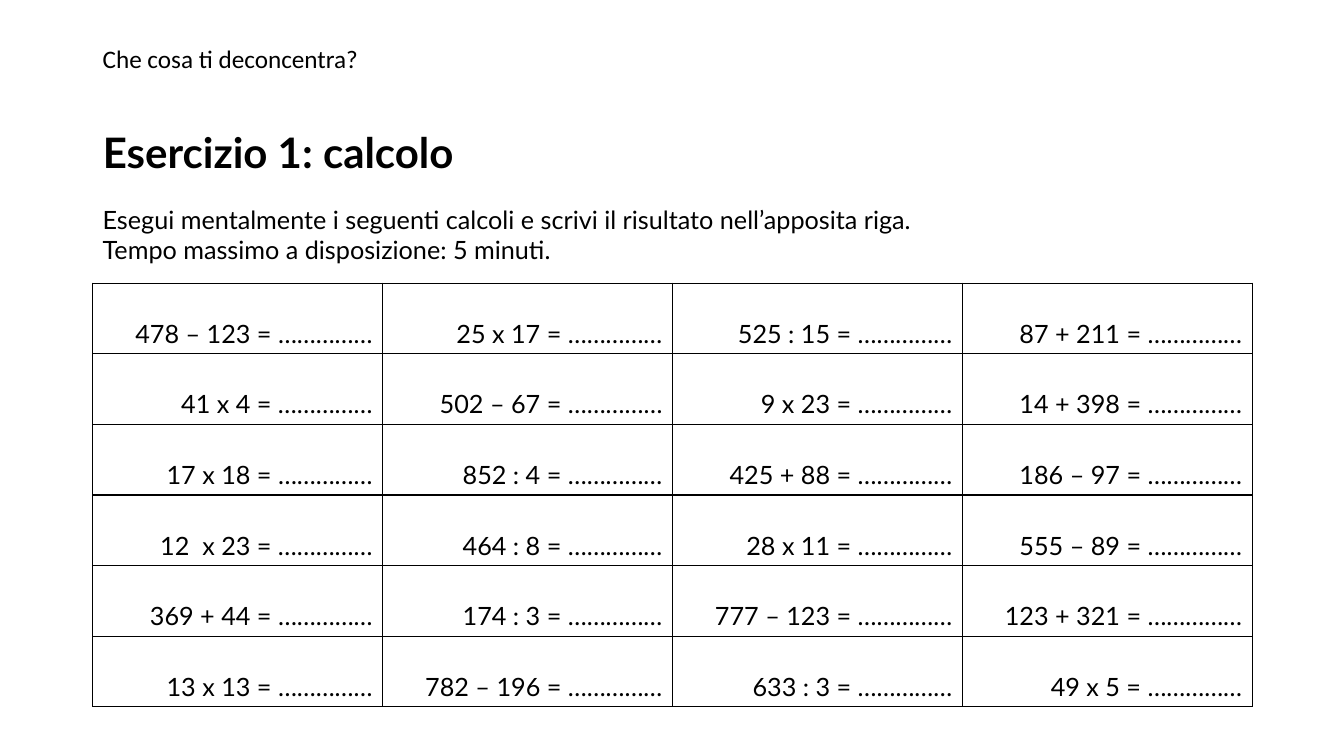
from dataclasses import dataclass

from lxml.etree import SubElement
from pptx import Presentation
from pptx.dml.color import RGBColor
from pptx.enum.text import MSO_ANCHOR, PP_ALIGN
from pptx.oxml.ns import qn
from pptx.util import Inches, Pt


@dataclass(frozen=True)
class Theme:
    ink: str = "000000"
    paper: str = "FFFFFF"
    head_font: str = "Calibri"
    font: str = "Lato"
    title_size: int = 30
    body_size: int = 18
    border: float = 1


THEME = Theme()
LEFT, WIDTH = 0.92, 11.5
BLANK = "……………"
CALCULATIONS = [
    ["478 – 123", "25 x 17", "525 : 15", "87 + 211"],
    ["41 x 4", "502 – 67", "9 x 23", "14 + 398"],
    ["17 x 18", "852 : 4", "425 + 88", "186 – 97"],
    ["12  x 23", "464 : 8", "28 x 11", "555 – 89"],
    ["369 + 44", "174 : 3", "777 – 123", "123 + 321"],
    ["13 x 13", "782 – 196", "633 : 3", "49 x 5"],
]


def write(tf, text, font=THEME.font, size=THEME.body_size, bold=False,
          align=PP_ALIGN.LEFT, spacing=1.0):
    p = tf.paragraphs[0]
    p.text = text
    p.alignment = align
    p.line_spacing = spacing
    for r in p.runs:
        r.font.name = font
        r.font.size = Pt(size)
        r.font.bold = bold
        r.font.color.rgb = RGBColor.from_string(THEME.ink)


def add_text(s, box, text, wrap=True, **fmt):
    sp = s.shapes.add_textbox(*map(Inches, box))
    sp.text_frame.word_wrap = wrap
    write(sp.text_frame, text, **fmt)


def set_title(s, box, text):
    sp = s.shapes.title
    sp.left, sp.top, sp.width, sp.height = map(Inches, box)
    sp.text_frame.vertical_anchor = MSO_ANCHOR.MIDDLE
    write(sp.text_frame, text, size=THEME.title_size, bold=True, spacing=0.9)


def set_borders(cell):
    tcPr = cell._tc.get_or_add_tcPr()
    for i, side in enumerate(("lnL", "lnR", "lnT", "lnB")):
        ln = SubElement(tcPr, qn(f"a:{side}"), w=str(Pt(THEME.border)))
        fill = SubElement(ln, qn("a:solidFill"))
        SubElement(fill, qn("a:srgbClr"), val=THEME.ink)
        tcPr.insert(i, ln)


def add_exercise_table(s, box, rows):
    left, top, width, height = map(Inches, box)
    tbl = s.shapes.add_table(len(rows), len(rows[0]), left, top, width, height).table
    tbl.first_row = tbl.horz_banding = False
    for i, row in enumerate(rows):
        for j, calculation in enumerate(row):
            cell = tbl.cell(i, j)
            cell.fill.background()
            set_borders(cell)
            write(cell.text_frame, f"{calculation} = {BLANK}",
                  align=PP_ALIGN.RIGHT, spacing=2.0)


def build_exercise_slide(prs):
    s = prs.slides.add_slide(prs.slide_layouts[5])
    s.background.fill.solid()
    s.background.fill.fore_color.rgb = RGBColor.from_string(THEME.paper)
    set_title(s, (LEFT, 1.23, WIDTH, 0.62), "Esercizio 1: calcolo")
    add_text(s, (LEFT, 1.98, WIDTH, 0.71),
             "Esegui mentalmente i seguenti calcoli e scrivi il risultato "
             "nell’apposita riga.\vTempo massimo a disposizione: 5 minuti.")
    add_exercise_table(s, (LEFT, 2.81, WIDTH, 4.2), CALCULATIONS)
    add_text(s, (LEFT, 0.38, 2.77, 0.4), "Che cosa ti deconcentra?",
             wrap=False, font=THEME.head_font)


def main():
    prs = Presentation()
    prs.slide_width, prs.slide_height = Inches(13.33), Inches(7.5)
    build_exercise_slide(prs)
    prs.save("out.pptx")


if __name__ == "__main__":
    main()
